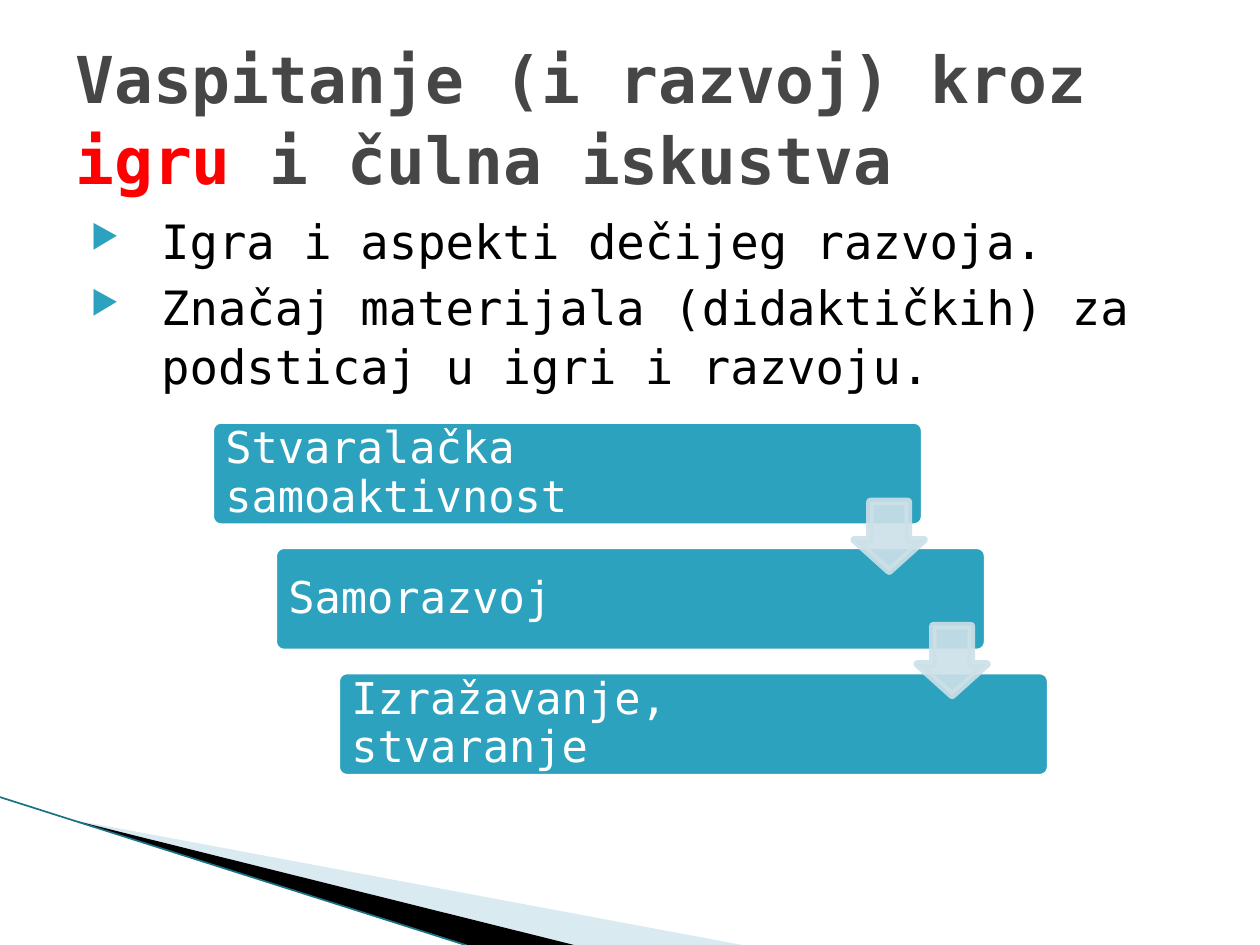
import pptx
import pptx.util
import pptx.dml.color
import pptx.enum.shapes
import pptx.enum.text
import pptx.oxml
import pptx.oxml.ns
from lxml import etree

Pt = pptx.util.Pt
RGBColor = pptx.dml.color.RGBColor
Shape = pptx.enum.shapes.MSO_SHAPE
Anchor = pptx.enum.text.MSO_ANCHOR
qn = pptx.oxml.ns.qn

FONT = "DejaVu Sans Mono"
WHITE = RGBColor(0xFF, 0xFF, 0xFF)
BLACK = RGBColor(0, 0, 0)
GRAY = RGBColor(0x46, 0x46, 0x46)
RED = RGBColor(0xFF, 0, 0)
TEAL = RGBColor(0x2D, 0xA2, 0xBF)
DARK_TEAL = RGBColor(0x1A, 0x72, 0x88)
PALE_BLUE = RGBColor(0xA0, 0xCB, 0xDC)
ARROW_BLUE = RGBColor(0xCD, 0xE0, 0xE8)


def add_text(page, area, paragraphs, size, color=BLACK, bold=False,
             anchor=Anchor.TOP, insets=(7.2, 3.6), spacing=1.04, before=0,
             bullet=None):
    """Place paragraphs, each a list of (text, color or None) spans."""
    box = page.shapes.add_textbox(*map(Pt, area))
    frame = box.text_frame
    frame.word_wrap = True
    frame.vertical_anchor = anchor
    frame.margin_left = frame.margin_right = Pt(insets[0])
    frame.margin_top = frame.margin_bottom = Pt(insets[1])
    for index, spans in enumerate(paragraphs):
        para = frame.paragraphs[0] if index == 0 else frame.add_paragraph()
        para.line_spacing = spacing
        if index and before:
            para.space_before = Pt(before)
        if bullet:
            add_bullet(para, bullet)
        for text, span_color in spans:
            span = para.add_run()
            span.text = text
            span.font.name = FONT
            span.font.size = Pt(size)
            span.font.bold = bold
            span.font.color.rgb = span_color or color
    return box


def add_bullet(para, mark):
    properties = para._p.get_or_add_pPr()
    properties.set("marL", str(Pt(49)))
    properties.set("indent", str(Pt(-40.3)))
    color = etree.SubElement(properties, qn("a:buClr"))
    etree.SubElement(color, qn("a:srgbClr"), val=str(TEAL))
    etree.SubElement(properties, qn("a:buSzPct"), val="68000")
    etree.SubElement(properties, qn("a:buChar"), char=mark)


def set_opacity(fill_owner, percent):
    for color in fill_owner.iter(qn("a:srgbClr")):
        etree.SubElement(color, qn("a:alpha"), val=str(percent * 1000))


def add_block(page, kind, area, adjustments, color, line_color):
    block = page.shapes.add_shape(kind, *map(Pt, area))
    block.shadow.inherit = False
    for index, value in enumerate(adjustments):
        block.adjustments[index] = value
    block.fill.solid()
    block.fill.fore_color.rgb = color
    block.line.color.rgb = line_color
    block.line.width = Pt(4.33)
    return block


def add_wedge(page, points, color, opacity=100):
    start, *others = [(Pt(x), Pt(y)) for x, y in points]
    builder = page.shapes.build_freeform(*start)
    builder.add_line_segments(others, close=True)
    wedge = builder.convert_to_shape()
    wedge.shadow.inherit = False
    wedge.fill.solid()
    wedge.fill.fore_color.rgb = color
    wedge.line.fill.background()
    if opacity < 100:
        set_opacity(wedge._element.spPr, opacity)


def draw_corner(page, left, top, width, height):
    """Swoosh in the lower left corner."""
    bottom = top + height
    tip = (left + 39, top + 12.5)
    add_wedge(page, [tip, (left + width, bottom), (left + 328, bottom)],
              PALE_BLUE, opacity=40)
    add_wedge(page, [tip, (left + 328, bottom), (left + 267, bottom)], BLACK)
    edge = page.shapes.add_connector(
        pptx.enum.shapes.MSO_CONNECTOR.STRAIGHT,
        Pt(left), Pt(top), Pt(left + 266), Pt(bottom))
    edge.line.color.rgb = DARK_TEAL
    edge.line.width = Pt(0.95)
    etree.SubElement(edge._element.spPr, qn("a:effectLst"))


def draw_steps(page, left, top, labels):
    """Staircase of boxes, with an arrow from each one to the next."""
    width, height, shift, drop = 408.2, 61.2, 36, 71.6
    for index, label in enumerate(labels):
        x, y = left + index * shift, top + index * drop
        add_block(page, Shape.ROUNDED_RECTANGLE, (x, y, width, height),
                  [0.1], TEAL, WHITE)
        add_text(page, (x + 1.5, y + 1.8, 328.3, 57.6), [[(label, None)]],
                 size=25, color=WHITE, anchor=Anchor.MIDDLE,
                 insets=(7.2, 7.2), spacing=0.92)
    for index in range(len(labels) - 1):
        arrow = add_block(
            page, Shape.DOWN_ARROW,
            (left + 368 + index * shift, top + 46.6 + index * 71, 39.8, 39.8),
            [0.55, 0.45], ARROW_BLUE, ARROW_BLUE)
        set_opacity(arrow._element.spPr, 90)


def main():
    deck = pptx.Presentation()
    deck.slide_width, deck.slide_height = Pt(720), Pt(540)
    page = deck.slides.add_slide(deck.slide_layouts[6])

    draw_corner(page, 0, 455.5, 424, 84.5)

    # Body bullets
    add_text(page, (36, 116.6, 648, 356.4), [
        [("Igra i aspekti dečijeg razvoja.", None)],
        [("Značaj materijala (didaktičkih) za podsticaj u igri i razvoju.",
          None)],
    ], size=27, before=4, bullet="▶")

    # Title
    add_text(page, (36, 21.6, 648, 90), [[
        ("Vaspitanje (i razvoj) kroz ", None),
        ("igru", RED),
        (" i čulna iskustva", None),
    ]], size=36.9, color=GRAY, bold=True, anchor=Anchor.MIDDLE)

    draw_steps(page, 120.2, 240, [
        "Stvaralačka samoaktivnost",
        "Samorazvoj",
        "Izražavanje, stvaranje",
    ])
    deck.save("out.pptx")


if __name__ == "__main__":
    main()
